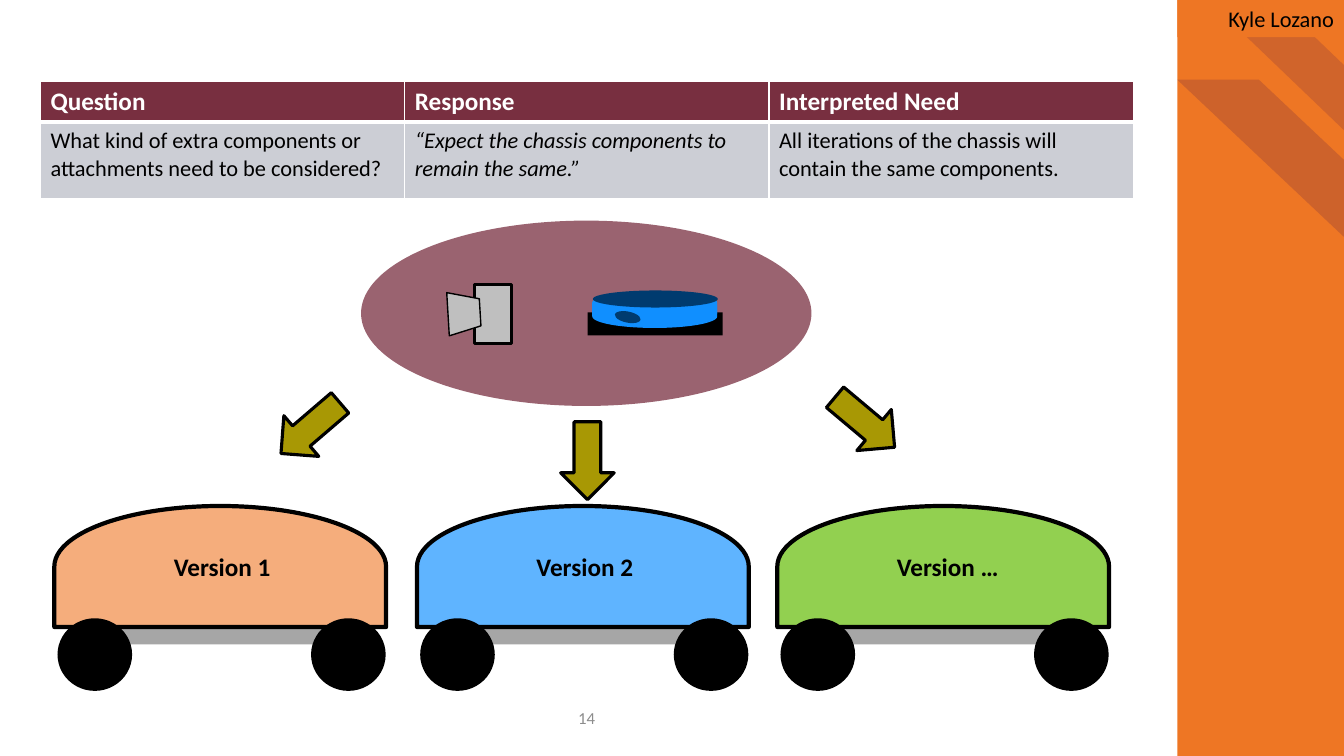
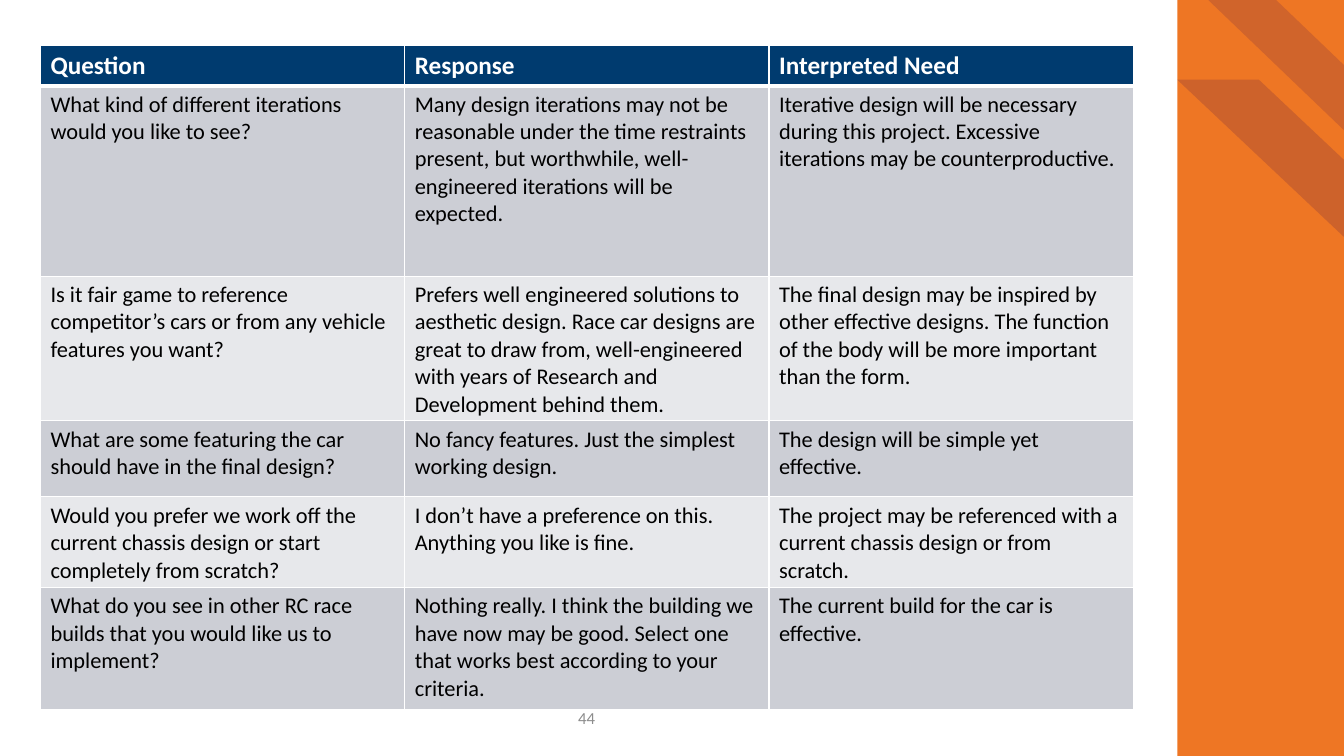
import lxml.etree
import pptx
import pptx.dml.color
import pptx.enum.shapes
import pptx.enum.text
import pptx.oxml.ns
import pptx.util

Cm = pptx.util.Cm
Pt = pptx.util.Pt
RGBColor = pptx.dml.color.RGBColor
MSO_SHAPE = pptx.enum.shapes.MSO_SHAPE
PP_ALIGN = pptx.enum.text.PP_ALIGN
MSO_ANCHOR = pptx.enum.text.MSO_ANCHOR
qn = pptx.oxml.ns.qn

BLACK = RGBColor(0x00, 0x00, 0x00)
WHITE = RGBColor(0xFF, 0xFF, 0xFF)
ORANGE = RGBColor(0xEE, 0x76, 0x24)
MAROON = RGBColor(0x78, 0x2F, 0x40)
NAVY = RGBColor(0x00, 0x3B, 0x6F)
ROSE = RGBColor(0x9A, 0x63, 0x70)
BLUE = RGBColor(0x10, 0x8F, 0xFF)
SKY = RGBColor(0x5F, 0xB4, 0xFF)
PEACH = RGBColor(0xF5, 0xAD, 0x7C)
GREEN = RGBColor(0x92, 0xD0, 0x50)
OLIVE = RGBColor(0xA8, 0x98, 0x04)
SILVER = RGBColor(0xBF, 0xBF, 0xBF)
STEEL = RGBColor(0xA6, 0xA6, 0xA6)
GRAY = RGBColor(0x8C, 0x8C, 0x8C)
ROW_DARK = RGBColor(0xCC, 0xCE, 0xD5)
ROW_LIGHT = RGBColor(0xE7, 0xE8, 0xEB)

FONT = "Calibri"
SLIDE_W, SLIDE_H = 33.87, 19.05
BAND_X, BAND_W = 29.67, 4.2
TABLE_X, COL_W = 1.02, 9.18
HEADINGS = ("Question", "Response", "Interpreted Need")


def add_shape(shapes, kind, x, y, w, h, fill, line=0, rotation=0):
    sp = shapes.add_shape(kind, Cm(x), Cm(y), Cm(w), Cm(h))
    sp.shadow.inherit = False
    sp.fill.solid()
    sp.fill.fore_color.rgb = fill
    if line:
        sp.line.color.rgb = BLACK
        sp.line.width = Pt(line)
    else:
        sp.line.fill.background()
    sp.rotation = rotation
    return sp


def set_text(tf, text, size, color, bold=False, italic=False, align=PP_ALIGN.LEFT):
    tf.text = text
    p = tf.paragraphs[0]
    p.alignment = align
    for r in p.runs:
        r.font.name = FONT
        r.font.size = Pt(size)
        r.font.color.rgb = color
        r.font.bold = bold
        r.font.italic = italic


def add_label(shapes, x, y, w, h, text, size, color, wrap=False, **style):
    sp = shapes.add_textbox(Cm(x), Cm(y), Cm(w), Cm(h))
    sp.text_frame.word_wrap = wrap
    set_text(sp.text_frame, text, size, color, **style)
    return sp


def add_stripe(s, x, y, w, h, opacity, adjustment):
    sp = add_shape(s.shapes, MSO_SHAPE.DIAGONAL_STRIPE, x, y, w, h, MAROON)
    sp.adjustments[0] = adjustment
    sp._element.spPr.find(qn("a:xfrm")).set("flipH", "1")
    color = sp._element.spPr.find(".//" + qn("a:srgbClr"))
    lxml.etree.SubElement(color, qn("a:alpha")).set("val", str(opacity * 1000))


def add_base_slide(prs, number):
    s = prs.slides.add_slide(prs.slide_layouts[6])
    add_shape(s.shapes, MSO_SHAPE.RECTANGLE, BAND_X, 0, BAND_W, SLIDE_H, ORANGE)
    add_stripe(s, BAND_X, 2.01, BAND_W, 3.96, 28, 0.51)
    add_stripe(s, BAND_X + 0.78, 0, BAND_W - 0.78, 3.28, 25, 0.5)
    sp = add_label(s.shapes, 13.77, 17.7, 2.03, 0.76, str(number), 12, GRAY,
                   wrap=True, align=PP_ALIGN.CENTER)
    sp.text_frame.vertical_anchor = MSO_ANCHOR.MIDDLE
    return s


def set_borders(cell, top, bottom):
    tcPr = cell._tc.get_or_add_tcPr()
    for side, width in (("L", 1), ("R", 1), ("T", top), ("B", bottom)):
        ln = lxml.etree.SubElement(tcPr, qn("a:ln" + side), w=str(Pt(width)))
        fill = lxml.etree.SubElement(ln, qn("a:solidFill"))
        lxml.etree.SubElement(fill, qn("a:srgbClr"), val=str(WHITE))


def add_needs_table(s, y, head_color, heights, rows, italic_col=None):
    table = s.shapes.add_table(len(heights), len(HEADINGS), Cm(TABLE_X), Cm(y),
                               Cm(COL_W * len(HEADINGS)), Cm(sum(heights))).table
    for col in table.columns:
        col.width = Cm(COL_W)
    for i, (height, texts) in enumerate(zip(heights, [HEADINGS] + rows)):
        table.rows[i].height = Cm(height)
        head = i == 0
        for j, text in enumerate(texts):
            cell = table.cell(i, j)
            set_borders(cell, 3 if i == 1 else 1, 3 if head else 1)
            cell.fill.solid()
            cell.fill.fore_color.rgb = head_color if head else (ROW_LIGHT, ROW_DARK)[i % 2]
            set_text(cell.text_frame, text, 18 if head else 16,
                     WHITE if head else BLACK, bold=head,
                     italic=not head and j == italic_col)


def add_name_tag(s, name):
    sp = add_shape(s.shapes, MSO_SHAPE.RECTANGLE, BAND_X, 0, BAND_W, 0.94, ORANGE)
    set_text(sp.text_frame, name, 16, BLACK, align=PP_ALIGN.RIGHT)


def add_components(s, x, y):
    shapes = s.shapes.add_group_shape().shapes
    for kind, dx, dy, w, h, fill, line, rotation in (
        (MSO_SHAPE.OVAL, 0, 0, 11.35, 4.67, ROSE, 0, 0),
        (MSO_SHAPE.RECTANGLE, 2.86, 1.6, 0.94, 1.5, SILVER, 2.25, 0),
        (MSO_SHAPE.TRAPEZOID, 2.05, 1.93, 1.09, 0.81, SILVER, 1, 86.6),
        (MSO_SHAPE.RECTANGLE, 5.71, 2.31, 3.4, 0.58, BLACK, 0, 0),
        (MSO_SHAPE.FLOWCHART_DELAY, 7.11, 0.84, 0.58, 3.15, BLUE, 0, 90),
        (MSO_SHAPE.FLOWCHART_DELAY, 7.11, 0.49, 0.58, 3.15, BLUE, 0, 270),
        (MSO_SHAPE.OVAL, 5.84, 1.76, 3.15, 0.43, NAVY, 0, 0),
        (MSO_SHAPE.OVAL, 6.39, 2.29, 0.66, 0.28, NAVY, 0, 11.4),
    ):
        add_shape(shapes, kind, x + dx, y + dy, w, h, fill, line, rotation)


def add_vehicle(s, x, y, text, text_w, fill, arrow_dx, arrow_dy, arrow_rotation):
    body_w, body_h = 8.36, 3.05
    shift = (body_w - body_h) / 2
    shapes = s.shapes.add_group_shape().shapes
    add_shape(shapes, MSO_SHAPE.RECTANGLE, x + 0.83, y + 2.83, 6.78, 0.66, STEEL)
    add_shape(shapes, MSO_SHAPE.FLOWCHART_DELAY, x + shift, y - shift,
              body_h, body_w, fill, 3, 270)
    for wheel_dx in (0.08, 6.47):
        add_shape(shapes, MSO_SHAPE.OVAL, x + wheel_dx, y + 2.83, 1.88, 1.83, BLACK)
    add_label(shapes, x + 2.76, y + 1.03, text_w, 1.02, text, 18, BLACK, bold=True)
    add_shape(shapes, MSO_SHAPE.DOWN_ARROW, x + arrow_dx, y + arrow_dy,
              1.35, 1.96, OLIVE, 2.25, arrow_rotation)


def add_chassis_slide(prs):
    s = add_base_slide(prs, 14)
    add_needs_table(s, 2.06, MAROON, (1.02, 1.92), [
        ("What kind of extra components or attachments need to be considered?",
         "“Expect the chassis components to remain the same.”",
         "All iterations of the chassis will contain the same components."),
    ], italic_col=1)
    add_name_tag(s, "Kyle Lozano")
    add_components(s, 9.1, 5.56)
    for x, *vehicle in (
        (1.37, "Version 1", 2.97, PEACH, 5.78, -2.94, 49.4),
        (10.51, "Version 2", 2.97, SKY, 3.62, -2.12, 0),
        (19.59, "Version …", 3.2, GREEN, 1.53, -3.09, 310),
    ):
        add_vehicle(s, x, 12.75, *vehicle)


def add_interview_slide(prs):
    s = add_base_slide(prs, 44)
    add_needs_table(s, 1.14, NAVY, (1.02, 4.8, 2.48, 1.92, 1.35, 3.07), [
        ("What kind of different iterations would you like to see?",
         "Many design iterations may not be reasonable under the time restraints "
         "present, but worthwhile, well-engineered iterations will be expected.",
         "Iterative design will be necessary during this project. "
         "Excessive iterations may be counterproductive."),
        ("Is it fair game to reference competitor’s cars or from any vehicle "
         "features you want?",
         "Prefers well engineered solutions to aesthetic design. Race car designs are "
         "great to draw from, well-engineered with years of Research and "
         "Development behind them.",
         "The final design may be inspired by other effective designs. The function "
         "of the body will be more important than the form."),
        ("What are some featuring the car should have in the final design?",
         "No fancy features. Just the simplest working design.",
         "The design will be simple yet effective."),
        ("Would you prefer we work off the current chassis design or start "
         "completely from scratch?",
         "I don’t have a preference on this. Anything you like is fine.",
         "The project may be referenced with a current chassis design or from scratch."),
        ("What do you see in other RC race builds that you would like us to implement?",
         "Nothing really. I think the building we have now may be good. Select one "
         "that works best according to your criteria.",
         "The current build for the car is effective."),
    ])


def main():
    prs = pptx.Presentation()
    prs.slide_width = Cm(SLIDE_W)
    prs.slide_height = Cm(SLIDE_H)
    add_chassis_slide(prs)
    add_interview_slide(prs)
    prs.save("out.pptx")


if __name__ == "__main__":
    main()
